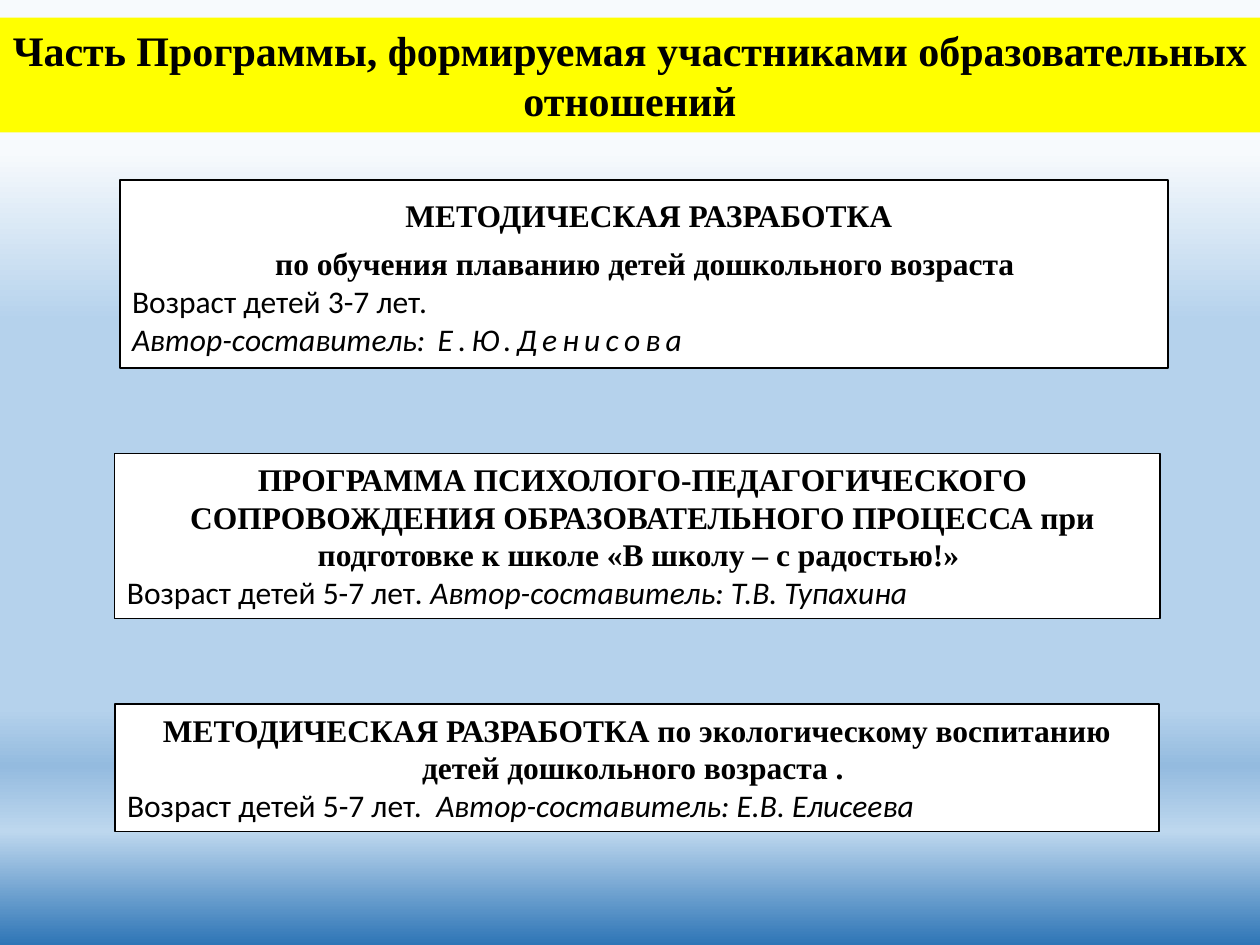
from copy import deepcopy

from pptx import Presentation
from pptx.dml.color import RGBColor
from pptx.enum.shapes import MSO_SHAPE
from pptx.enum.text import MSO_ANCHOR, PP_ALIGN
from pptx.util import Inches, Pt

RECTANGLE = MSO_SHAPE.RECTANGLE
MIDDLE, TOP = MSO_ANCHOR.MIDDLE, MSO_ANCHOR.TOP
CENTER, LEFT = PP_ALIGN.CENTER, PP_ALIGN.LEFT

BLACK = RGBColor(0x00, 0x00, 0x00)
WHITE = RGBColor(0xFF, 0xFF, 0xFF)
YELLOW = RGBColor(0xFF, 0xFF, 0x00)
BACKGROUND_STOPS = [
    (16, RGBColor(0xF7, 0xFA, 0xFD)),
    (34, RGBColor(0xB5, 0xD2, 0xEC)),
    (75, RGBColor(0xB5, 0xD2, 0xEC)),
    (81, RGBColor(0x94, 0xBB, 0xDF)),
    (88, RGBColor(0xBD, 0xD7, 0xEE)),
    (100, RGBColor(0x2E, 0x75, 0xB6)),
]
HEADING_FONT, DETAIL_FONT = "Times New Roman", "Calibri"


def add_run(paragraph, text, font_name, size, bold=False, italic=False):
    run = paragraph.add_run()
    run.text = text
    run.font.name = font_name
    run.font.size = Pt(size)
    run.font.bold = bold
    run.font.italic = italic
    run.font.color.rgb = BLACK
    return run


presentation = Presentation()
presentation.slide_width = Inches(10)
presentation.slide_height = Inches(7.5)
slide = presentation.slides.add_slide(presentation.slide_layouts[5])

# Background: vertical gradient with six stops
fill = slide.background.fill
fill.gradient()
fill.gradient_angle = 270
stop_list = fill.gradient_stops[0]._gs.getparent()
for _ in range(len(BACKGROUND_STOPS) - len(fill.gradient_stops)):
    stop_list.append(deepcopy(stop_list[0]))
for stop, (position, color) in zip(fill.gradient_stops, BACKGROUND_STOPS):
    stop.position = position / 100
    stop.color.rgb = color

# Title band across the whole width
title = slide.shapes.title
title.left, title.top = 0, Inches(0.14)
title.width, title.height = presentation.slide_width, Inches(0.91)
title.fill.solid()
title.fill.fore_color.rgb = YELLOW
title.text_frame.vertical_anchor = MIDDLE
paragraph = title.text_frame.paragraphs[0]
paragraph.alignment = CENTER
add_run(paragraph, "Часть Программы, формируемая участниками образовательных отношений",
        HEADING_FONT, 24, bold=True)

# Programme cards: position, top inset, heading indent, heading lines,
# then detail lines made of (text, italic, letter spacing) runs
cards = [
    ((0.95, 1.43, 8.32, 1.49), 0.24, 0.08,
     ["МЕТОДИЧЕСКАЯ РАЗРАБОТКА",
      "по обучения плаванию детей дошкольного возраста "],
     [[("Возраст детей 3-7 лет.", False, 0)],
      [("Автор-составитель:", True, 0), (" Е.Ю.Денисова", True, 3)]]),
    ((0.91, 3.6, 8.3, 1.31), 0.05, 0.08,
     ["ПРОГРАММА ПСИХОЛОГО-ПЕДАГОГИЧЕСКОГО СОПРОВОЖДЕНИЯ ОБРАЗОВАТЕЛЬНОГО "
      "ПРОЦЕССА при подготовке к школе «В школу – с радостью!» "],
     [[("Возраст детей 5-7 лет", False, 0),
       (". Автор-составитель: Т.В. Тупахина", True, 0)]]),
    ((0.91, 5.59, 8.29, 1.01), 0.05, 0,
     ["МЕТОДИЧЕСКАЯ РАЗРАБОТКА по экологическому воспитанию детей "
      "дошкольного возраста . "],
     [[("Возраст детей 5-7 лет.  ", False, 0),
       ("Автор-составитель: Е.В. Елисеева", True, 0)]]),
]

for box, top_inset, indent, headings, details in cards:
    card = slide.shapes.add_shape(RECTANGLE, *[Inches(length) for length in box])
    card.shadow.inherit = False
    card.fill.solid()
    card.fill.fore_color.rgb = WHITE
    card.line.color.rgb = BLACK
    card.line.width = Pt(1)
    frame = card.text_frame
    frame.word_wrap = True
    frame.vertical_anchor = TOP
    frame.margin_top = Inches(top_inset)

    for index, heading in enumerate(headings):
        paragraph = frame.paragraphs[0] if index == 0 else frame.add_paragraph()
        paragraph.alignment = CENTER
        paragraph._p.get_or_add_pPr().set("marL", str(Inches(indent)))
        if len(headings) > 1:
            paragraph.line_spacing = Pt(13.6)
            paragraph.space_before = Pt(13.6 * index)
        add_run(paragraph, heading, HEADING_FONT, 18, bold=True)

    for detail in details:
        paragraph = frame.add_paragraph()
        paragraph.alignment = LEFT
        for text, italic, spacing in detail:
            run = add_run(paragraph, text, DETAIL_FONT, 18, italic=italic)
            if spacing:
                run.font._element.set("spc", str(spacing * 100))

presentation.save("out.pptx")
